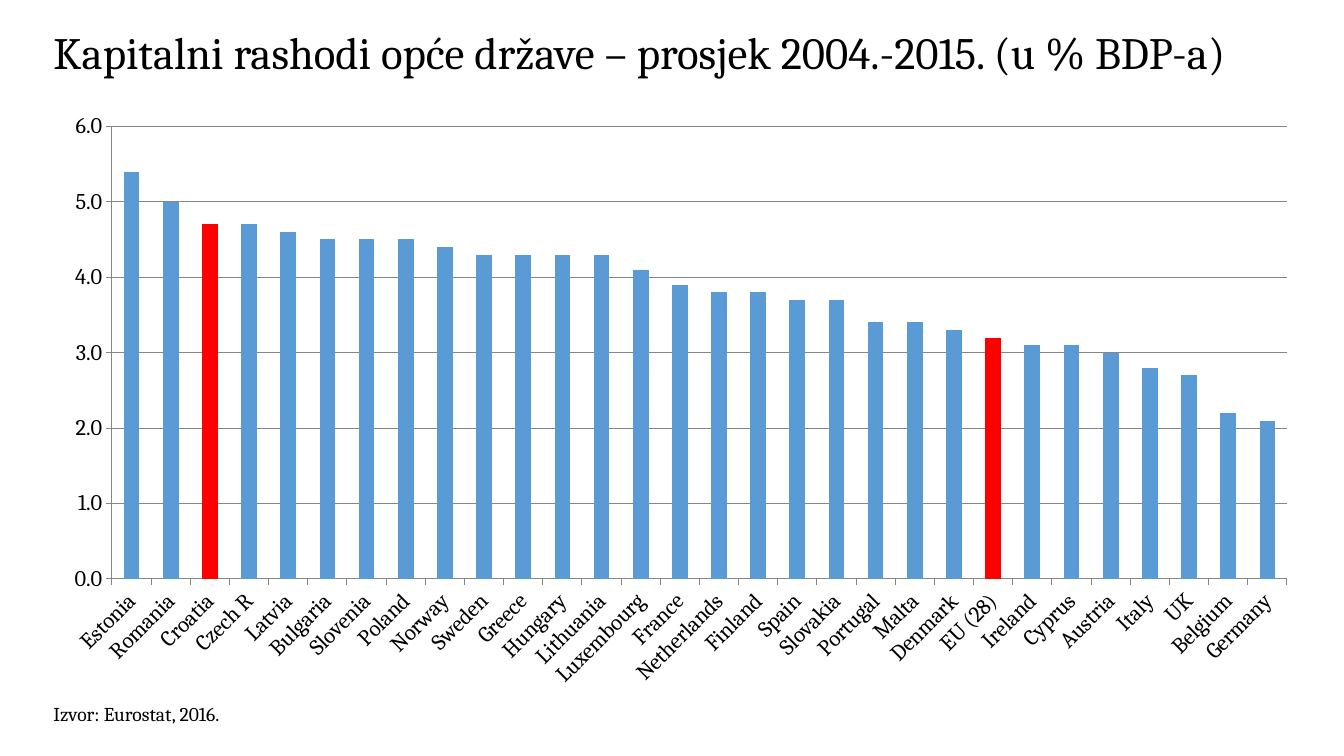
from pptx import Presentation
from pptx import util as u
from pptx.chart.data import CategoryChartData
from pptx.dml.color import RGBColor
from pptx.enum import chart as charts, text

COLORS = {"ink": "000000", "bar": "5B9BD5", "highlight": "FF0000", "grid": "868686"}

SPENDING = {
    "Estonia": 5.4, "Romania": 5.0, "Croatia": 4.7, "Czech R": 4.7, "Latvia": 4.6,
    "Bulgaria": 4.5, "Slovenia": 4.5, "Poland": 4.5, "Norway": 4.4, "Sweden": 4.3,
    "Greece": 4.3, "Hungary": 4.3, "Lithuania": 4.3, "Luxembourg": 4.1, "France": 3.9,
    "Netherlands": 3.8, "Finland": 3.8, "Spain": 3.7, "Slovakia": 3.7, "Portugal": 3.4,
    "Malta": 3.4, "Denmark": 3.3, "EU (28)": 3.2, "Ireland": 3.1, "Cyprus": 3.1,
    "Austria": 3.0, "Italy": 2.8, "UK": 2.7, "Belgium": 2.2, "Germany": 2.1,
}
HIGHLIGHTED = ("Croatia", "EU (28)")


class SlideBuilder:
    font_name = "Cambria"

    def __init__(self, slide):
        self.slide = slide

    def color(self, key):
        return RGBColor.from_string(COLORS[key])

    def style_font(self, font, size):
        font.name = self.font_name
        font.size = u.Pt(size)
        font.bold = False
        font.color.rgb = self.color("ink")

    def set_text(self, frame, wording, size):
        frame.word_wrap = True
        frame.text = wording
        paragraph = frame.paragraphs[0]
        paragraph.alignment = text.PP_ALIGN.LEFT
        self.style_font(paragraph.font, size)
        return paragraph

    def title(self, wording, left, top, width, height):
        heading = self.slide.shapes.title
        heading.left, heading.top = u.Pt(left), u.Pt(top)
        heading.width, heading.height = u.Pt(width), u.Pt(height)
        heading.text_frame.vertical_anchor = text.MSO_ANCHOR.MIDDLE
        heading.text_frame.auto_size = text.MSO_AUTO_SIZE.NONE
        self.set_text(heading.text_frame, wording, 32).line_spacing = 0.9

    def note(self, wording, left, top, width, height):
        box = self.slide.shapes.add_textbox(u.Pt(left), u.Pt(top), u.Pt(width), u.Pt(height))
        self.set_text(box.text_frame, wording, 14)

    def column_chart(self, values, highlighted, left, top, width, height):
        data = CategoryChartData(number_format="0.0")
        data.categories = list(values)
        data.add_series("Series 1", list(values.values()))
        chart = self.slide.shapes.add_chart(
            charts.XL_CHART_TYPE.COLUMN_CLUSTERED,
            u.Pt(left), u.Pt(top), u.Pt(width), u.Pt(height), data).chart
        chart.has_legend = False
        chart.has_title = False
        self.style_font(chart.font, 16)

        columns = chart.plots[0]
        columns.gap_width = 150
        columns.vary_by_categories = False
        spending = columns.series[0]
        self.fill(spending, "bar")
        for index, country in enumerate(values):
            if country in highlighted:
                self.fill(spending.points[index], "highlight")

        countries, percent = chart.category_axis, chart.value_axis
        for axis in (countries, percent):
            axis.major_tick_mark = charts.XL_TICK_MARK.OUTSIDE
            axis.minor_tick_mark = charts.XL_TICK_MARK.NONE
            self.thin_line(axis.format.line)
            self.style_font(axis.tick_labels.font, 16)
        countries.has_major_gridlines = False
        countries._element.txPr.bodyPr.set("rot", "-2700000")
        percent.minimum_scale, percent.maximum_scale, percent.major_unit = 0, 6, 1
        percent.tick_labels.number_format = "#,##0.0"
        percent.tick_labels.number_format_is_linked = False
        percent.has_major_gridlines = True
        self.thin_line(percent.major_gridlines.format.line)

    def fill(self, bars, key):
        bars.format.fill.solid()
        bars.format.fill.fore_color.rgb = self.color(key)

    def thin_line(self, line):
        line.color.rgb = self.color("grid")
        line.width = u.Pt(0.75)


def main():
    deck = Presentation()
    deck.slide_width, deck.slide_height = u.Pt(960), u.Pt(540)
    builder = SlideBuilder(deck.slides.add_slide(deck.slide_layouts[5]))
    builder.title("Kapitalni rashodi opće države – prosjek 2004.-2015. (u % BDP-a)",
                  31, 0, 912, 78.5)
    builder.column_chart(SPENDING, HIGHLIGHTED, 35.3, 72.7, 902, 427)
    builder.note("Izvor: Eurostat, 2016.", 31, 498.2, 318, 24.5)
    deck.save("out.pptx")


if __name__ == "__main__":
    main()
